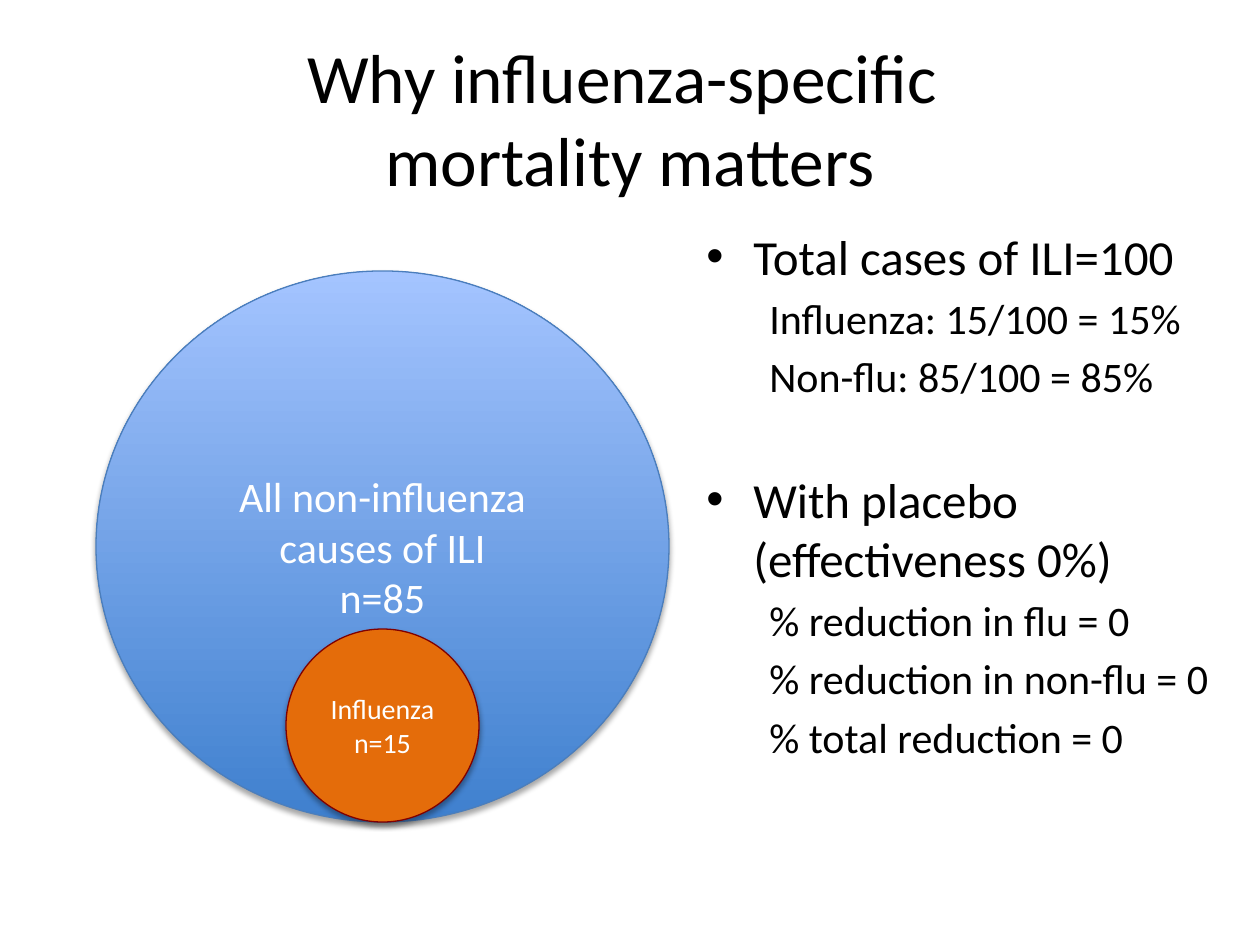
from dataclasses import dataclass
from lxml import etree
from pptx import Presentation, util as u
from pptx.dml.color import RGBColor as Rgb
from pptx.enum import shapes, text
from pptx.oxml import ns


@dataclass(frozen=True)
class Theme:
    font: str = "Calibri"
    ink: str = "000000"
    white: str = "FFFFFF"
    pale: str = "A4C4FF"
    deep: str = "3F80CE"
    rim: str = "4B7EBC"
    flu: str = "E46C0A"
    edge: str = "800000"
    title: float = 39.6
    head: int = 28
    sub: int = 24
    small: int = 16


T = Theme()
PX = u.Inches(1) / 126

TITLE = "Why influenza-specific \vmortality matters"
GROUPS = [
    ("Total cases of ILI=100",
     ["Influenza: 15/100 = 15%", "Non-flu: 85/100 = 85%"]),
    ("With placebo (effectiveness 0%)",
     ["% reduction in flu = 0", "% reduction in non-flu = 0",
      "% total reduction = 0"]),
]
CIRCLES = [
    ((96, 271, 573, 551), (T.pale, T.deep), T.rim, T.sub,
     ["All non-influenza causes of ILI", "n=85"]),
    ((286, 629, 193, 193), (T.flu,), T.edge, T.small,
     ["Influenza", "n=15"]),
]


def emu(box):
    return [round(n * PX) for n in box]


def style(para, size, color):
    para.font.name = T.font
    para.font.size = u.Pt(size)
    para.font.color.rgb = Rgb.from_string(color)


def fill_in(frame, lines, size, color):
    frame.word_wrap = True
    frame.vertical_anchor = text.MSO_ANCHOR.MIDDLE
    for i, line in enumerate(lines):
        para = frame.add_paragraph() if i else frame.paragraphs[0]
        para.text = line
        para.alignment = text.PP_ALIGN.CENTER
        style(para, size, color)


def add_point(frame, line, size, gap, left, hang, dot):
    first = not frame.paragraphs[0].text
    para = frame.paragraphs[0] if first else frame.add_paragraph()
    para.text = line
    para.space_before = u.Pt(gap)
    prop = para._p.get_or_add_pPr()
    prop.set("marL", str(round(left * PX)))
    prop.set("indent", str(round(-hang * PX)))
    if dot:
        etree.SubElement(prop, ns.qn("a:buFont")).set("typeface", "Arial")
        etree.SubElement(prop, ns.qn("a:buChar")).set("char", "•")
    style(para, size, T.ink)


def add_shade(shape):
    shape.shadow.inherit = False
    host = shape._element.spPr.find(ns.qn("a:effectLst"))
    shade = etree.SubElement(
        host, ns.qn("a:outerShdw"), blurRad=str(u.Pt(3.1)),
        dist=str(u.Pt(1.8)), dir="5400000", rotWithShape="0")
    color = etree.SubElement(shade, ns.qn("a:srgbClr"), val=T.ink)
    etree.SubElement(color, ns.qn("a:alpha"), val="35000")


def add_circle(slide, box, fills, line, size, lines):
    shape = slide.shapes.add_shape(shapes.MSO_SHAPE.OVAL, *emu(box))
    if len(fills) > 1:
        shape.fill.gradient()
        shape.fill.gradient_angle = 90
        for stop, color in zip(shape.fill.gradient_stops, reversed(fills)):
            stop.color.rgb = Rgb.from_string(color)
    else:
        shape.fill.solid()
        shape.fill.fore_color.rgb = Rgb.from_string(fills[0])
    shape.line.color.rgb = Rgb.from_string(line)
    shape.line.width = u.Pt(0.75)
    add_shade(shape)
    fill_in(shape.text_frame, lines, size, T.white)


def main():
    deck = Presentation()
    deck.slide_width, deck.slide_height = emu((1260, 945))
    slide = deck.slides.add_slide(deck.slide_layouts[6])

    title = slide.shapes.add_textbox(*emu((63, 38, 1134, 158)))
    fill_in(title.text_frame, [TITLE], T.title, T.ink)

    body = slide.shapes.add_textbox(*emu((694, 220, 542, 624))).text_frame
    body.word_wrap = True
    for i, (head, subs) in enumerate(GROUPS):
        add_point(body, head, T.head, 39 if i else 0, 47, 47, True)
        for sub in subs:
            add_point(body, sub, T.sub, 4.4, 63, 0, False)

    for circle in CIRCLES:
        add_circle(slide, *circle)
    deck.save("out.pptx")


if __name__ == "__main__":
    main()
